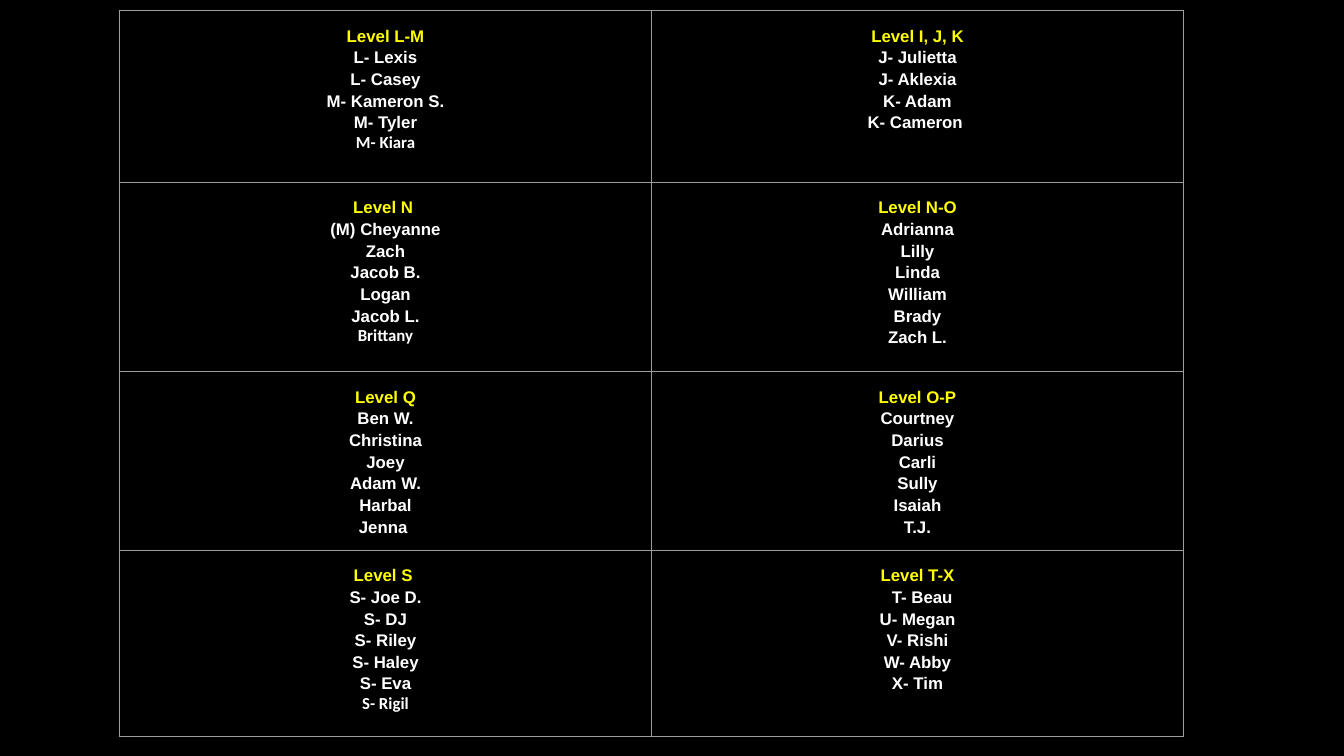
from dataclasses import dataclass

from lxml.etree import SubElement
from pptx import Presentation
from pptx.dml.color import RGBColor
from pptx.enum.text import PP_ALIGN
from pptx.oxml.ns import qn
from pptx.table import Table, _Cell
from pptx.text.text import TextFrame
from pptx.util import Pt


@dataclass(frozen=True)
class Theme:
    background: str = "000000"
    heading: str = "FFFF00"
    name: str = "FFFFFF"
    border: str = "9E9E9E"
    border_width: float = 0.75
    font: str = "Arial"
    added_font: str = "Calibri"
    size: float = 9
    spacing: float = 1.15
    inset: float = 7.2


@dataclass(frozen=True)
class Group:
    """A reading level; `added` is a last name set in the second font."""
    level: str
    names: tuple[str, ...]
    added: str = ""
    indents: tuple[tuple[str, float], ...] = ()


THEME = Theme()
LEFT, TOP, COL_WIDTH = 64, 5.76, 285
ROW_HEIGHTS = (92, 101.5, 95.4, 99.7)
GROUPS = (
    (Group("Level L-M", ("L- Lexis", "L- Casey", "M- Kameron S.", "M- Tyler"), "M- Kiara"),
     Group("Level I, J, K", ("J- Julietta", "J- Aklexia", "K- Adam", "K- Cameron "))),
    (Group("Level N ", ("(M) Cheyanne", "Zach", "Jacob B.", "Logan", "Jacob L."), "Brittany"),
     Group("Level N-O", ("Adrianna", "Lilly", "Linda", "William", "Brady", "Zach L."))),
    (Group("Level Q", ("Ben W.", "Christina", "Joey", "Adam W.", "Harbal", "Jenna ")),
     Group("Level O-P", ("Courtney", "Darius", "Carli", "Sully", "Isaiah", "T.J."))),
    (Group("Level S ", ("S- Joe D.", "S- DJ", "S- Riley", "S- Haley", "S- Eva"), "S- Rigil"),
     Group("Level T-X", ("T- Beau", "U- Megan", "V- Rishi", "W- Abby", "X- Tim"),
           indents=(("T- Beau", 5),))),
)


def add_line(tf: TextFrame, text: str, color: str, font: str = THEME.font,
             spacing: float = THEME.spacing, indent: float = 0) -> None:
    p = tf.add_paragraph() if tf.text else tf.paragraphs[0]
    p.text = text
    p.alignment = PP_ALIGN.CENTER
    p.line_spacing = spacing
    if indent:
        p._p.get_or_add_pPr().set("marL", str(Pt(indent)))
    f = p.runs[0].font
    f.name, f.size, f.bold = font, Pt(THEME.size), True
    f.color.rgb = RGBColor.from_string(color)


def set_borders(cell: _Cell) -> None:
    tc_pr = cell._tc.get_or_add_tcPr()
    for side in ("a:lnL", "a:lnR", "a:lnT", "a:lnB"):
        ln = SubElement(tc_pr, qn(side), w=str(Pt(THEME.border_width)))
        fill = SubElement(ln, qn("a:solidFill"))
        SubElement(fill, qn("a:srgbClr"), val=THEME.border)


def fill_cell(cell: _Cell, group: Group) -> None:
    set_borders(cell)
    cell.fill.background()
    cell.margin_left = cell.margin_right = Pt(THEME.inset)
    cell.margin_top = cell.margin_bottom = Pt(THEME.inset)
    tf = cell.text_frame
    add_line(tf, group.level, THEME.heading)
    indents = dict(group.indents)
    for name in group.names:
        add_line(tf, name, THEME.name, indent=indents.get(name, 0))
    if group.added:
        add_line(tf, group.added, THEME.name, THEME.added_font, spacing=1)


def fill_table(table: Table) -> None:
    table.first_row = table.horz_banding = False
    for col in table.columns:
        col.width = Pt(COL_WIDTH)
    for r, (height, groups) in enumerate(zip(ROW_HEIGHTS, GROUPS)):
        table.rows[r].height = Pt(height)
        for c, group in enumerate(groups):
            fill_cell(table.cell(r, c), group)


def main() -> None:
    prs = Presentation()
    prs.slide_width, prs.slide_height = Pt(720), Pt(405)
    s = prs.slides.add_slide(prs.slide_layouts[6])
    s.background.fill.solid()
    s.background.fill.fore_color.rgb = RGBColor.from_string(THEME.background)
    frame = s.shapes.add_table(len(GROUPS), 2, Pt(LEFT), Pt(TOP),
                               Pt(2 * COL_WIDTH), Pt(sum(ROW_HEIGHTS)))
    fill_table(frame.table)
    prs.save("out.pptx")


if __name__ == "__main__":
    main()
